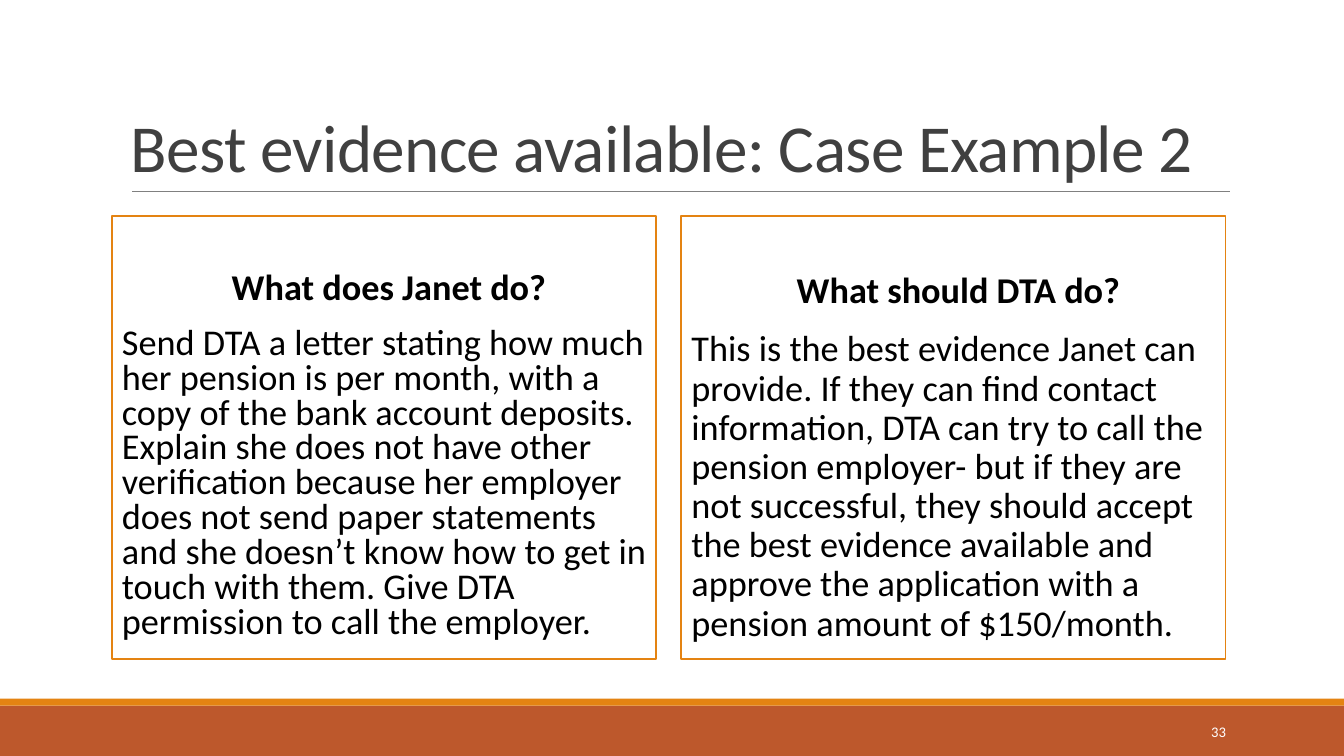
from dataclasses import dataclass

from pptx import Presentation
from pptx.dml.color import RGBColor
from pptx.enum.shapes import MSO_CONNECTOR as Connector, MSO_SHAPE as Shape
from pptx.enum.text import MSO_ANCHOR as Anchor, PP_ALIGN as Align
from pptx.oxml.ns import qn
from pptx.util import Pt


@dataclass(frozen=True)
class Theme:
    """Colours, font and type sizes of the slide."""
    font: str = "Calibri"
    white: str = "FFFFFF"
    black: str = "000000"
    title: str = "404040"
    rule: str = "808080"
    accent: str = "E48312"
    footer: str = "BD582C"
    title_size: float = 48
    body_size: float = 25.9
    number_size: float = 10.5


THEME = Theme()
WIDTH, HEIGHT = 960, 540
JANET = (
    "Send DTA a letter stating how much her pension is per month, with a copy of the bank "
    "account deposits. Explain she does not have other verification because her employer does "
    "not send paper statements and she doesn’t know how to get in touch with them. Give DTA "
    "permission to call the employer."
)
DTA = (
    "This is the best evidence Janet can provide. If they can find contact information, DTA can "
    "try to call the pension employer- but if they are not successful, they should accept the "
    "best evidence available and approve the application with a pension amount of $150/month."
)


def style_text(paragraph, size, color, bold=False, align=Align.LEFT):
    """Format a paragraph and its runs."""
    paragraph.alignment = align
    for run in paragraph.runs:
        run.font.name = THEME.font
        run.font.size = Pt(size)
        run.font.bold = bold
        run.font.color.rgb = RGBColor.from_string(color)


def add_box(slide, box, fill, outline=None):
    """Add a flat rectangle in the given box."""
    shape = slide.shapes.add_shape(Shape.RECTANGLE, *map(Pt, box))
    shape.shadow.inherit = False
    shape.fill.solid()
    shape.fill.fore_color.rgb = RGBColor.from_string(fill)
    if outline:
        shape.line.color.rgb = RGBColor.from_string(outline)
        shape.line.width = Pt(1.25)
    else:
        shape.line.fill.background()
    return shape


def add_label(slide, box, text, anchor):
    """Add a wrapping text box and return its paragraph."""
    frame = slide.shapes.add_textbox(*map(Pt, box)).text_frame
    frame.word_wrap = True
    frame.vertical_anchor = anchor
    frame.text = text
    return frame.paragraphs[0]


def add_title(slide, box, text):
    """Add the slide title with a thin rule along its foot."""
    left, top, width, height = box
    paragraph = add_label(slide, box, text, Anchor.BOTTOM)
    paragraph.line_spacing = 0.85
    style_text(paragraph, THEME.title_size, THEME.title)
    paragraph.runs[0].font._element.set("spc", "-50")
    foot = top + height
    rule = slide.shapes.add_connector(
        Connector.STRAIGHT, Pt(left + 8), Pt(foot), Pt(left + width), Pt(foot))
    rule.line.color.rgb = RGBColor.from_string(THEME.rule)
    rule.line.width = Pt(0.5)
    properties = rule._element.spPr
    properties.append(properties.makeelement(qn("a:effectLst"), {}))


def add_panel(slide, box, heading, body, spacing, inset):
    """Add an outlined panel with a centred heading over its body text."""
    frame = add_box(slide, box, THEME.white, THEME.accent).text_frame
    frame.word_wrap = True
    frame.vertical_anchor = Anchor.TOP
    frame.margin_left = frame.margin_right = 0
    frame.margin_top, frame.margin_bottom = Pt(inset), Pt(3.6)
    frame.text = f"{heading}\n{body}"
    first, second = frame.paragraphs
    style_text(first, THEME.body_size, THEME.black, bold=True, align=Align.CENTER)
    style_text(second, THEME.body_size, THEME.black)
    first.line_spacing, second.line_spacing = 1.0, spacing
    second.space_before = Pt(12)
    for paragraph in frame.paragraphs:
        paragraph.space_after = Pt(2)
        paragraph._p.get_or_add_pPr().set("marL", str(Pt(7.2)))


def add_footer(slide, box, number):
    """Add the two-tone footer band and the slide number."""
    left, top, width, height = box
    stripe = 5
    add_box(slide, (left, top + stripe, width, height - stripe), THEME.footer)
    add_box(slide, (left, top, width, stripe), THEME.accent)
    number_box = (left + 779.8, top + 9.3, 103, 28.8)
    paragraph = add_label(slide, number_box, number, Anchor.MIDDLE)
    style_text(paragraph, THEME.number_size, THEME.white, align=Align.RIGHT)


def main():
    """Build the slide and save it."""
    presentation = Presentation()
    presentation.slide_width, presentation.slide_height = Pt(WIDTH), Pt(HEIGHT)
    slide = presentation.slides.add_slide(presentation.slide_layouts[6])
    add_footer(slide, (0, 499, WIDTH, 41), "33")
    add_title(slide, (86.4, 22.3, 792, 114.5), "Best evidence available: Case Example 2")
    panels = (
        ("What does Janet do?", JANET, 0.8, 34.8),
        ("What should DTA do?", DTA, 0.9, 36.9),
    )
    for column, panel in enumerate(panels):
        add_panel(slide, (79.9 + column * 406.8, 154.1, 388.8, 316.8), *panel)
    presentation.save("out.pptx")


if __name__ == "__main__":
    main()
